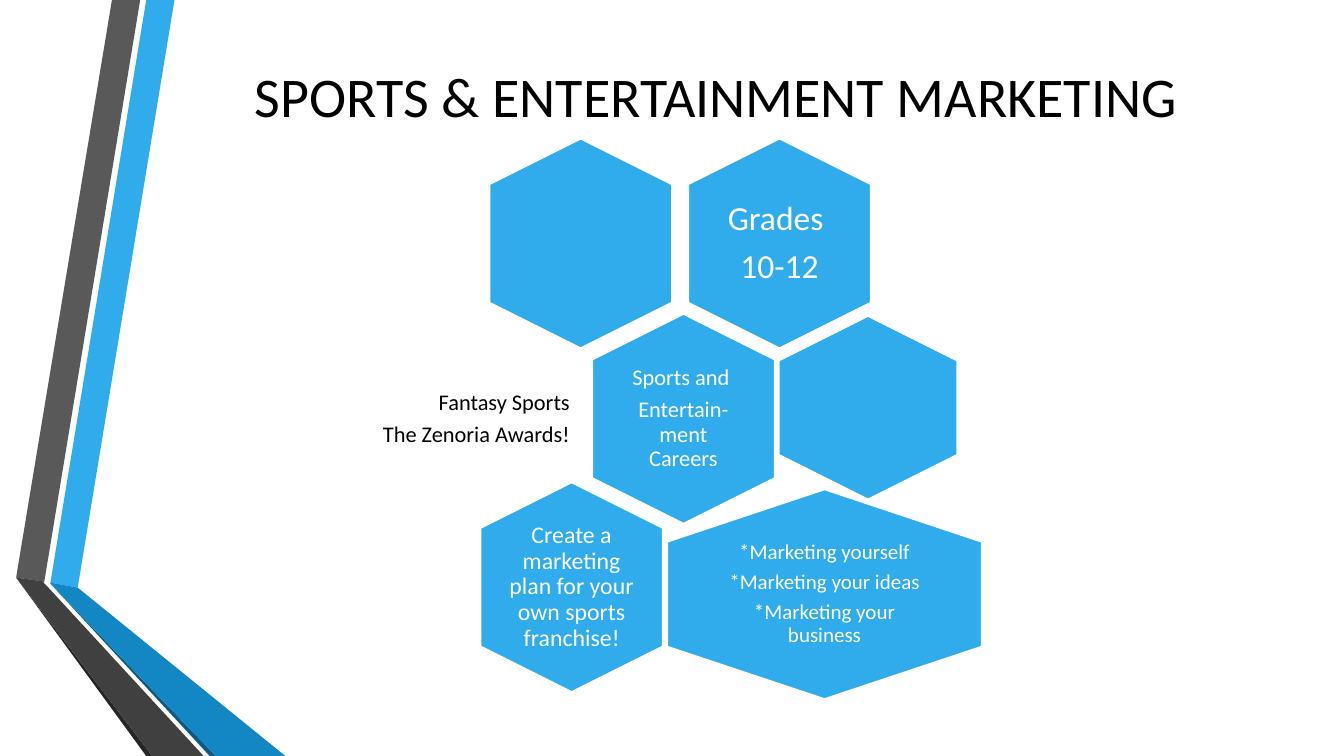
from pptx import Presentation
from pptx.dml.color import RGBColor
from pptx.enum.shapes import MSO_SHAPE
from pptx.enum.text import MSO_ANCHOR, MSO_AUTO_SIZE, PP_ALIGN
from pptx.util import Inches, Pt

HEXAGON = MSO_SHAPE.HEXAGON
MIDDLE = MSO_ANCHOR.MIDDLE
NO_AUTOFIT = MSO_AUTO_SIZE.NONE
CENTER, RIGHT = PP_ALIGN.CENTER, PP_ALIGN.RIGHT

WIDTH, HEIGHT = Inches(13.33), Inches(7.5)
FONT = "Calibri"
TITLE_SIZE = 40

WHITE = RGBColor(0xFF, 0xFF, 0xFF)
BLACK = RGBColor(0x00, 0x00, 0x00)
SKY = RGBColor(0x30, 0xAC, 0xEC)
OCEAN = RGBColor(0x12, 0x87, 0xC3)
NAVY = RGBColor(0x0C, 0x5A, 0x82)
GRAY = RGBColor(0x59, 0x59, 0x59)
CHARCOAL = RGBColor(0x40, 0x40, 0x40)
SOOT = RGBColor(0x26, 0x26, 0x26)

RIBBONS = [
    (SKY, [(3.75, 77.07), (5.78, 77.73), (12.98, 0), (10.88, 0)]),
    (GRAY, [(10.43, 0), (8.33, 0), (1.2, 76.4), (3.3, 76.93)]),
    (SOOT, [(1.2, 76.4), (10.88, 100), (11.33, 100)]),
    (NAVY, [(3.75, 77.2), (15.6, 100), (16.05, 100)]),
    (OCEAN, [(3.75, 77.07), (3.75, 77.2), (16.05, 100), (21.23, 100),
             (5.78, 77.73)]),
    (CHARCOAL, [(15.15, 100), (3.6, 77.73), (3.23, 77.07), (3.3, 76.93),
                (1.2, 76.4), (11.33, 100)]),
]

CELL = (13.58, 27.73)
SMALL_CELL = (13.28, 24.27)
WIDE_CELL = (23.4, 27.73)
CELL_TEXT = (9.3, 19.07)
WIDE_TEXT = (15.6, 18.53)
SIDE_TEXT = (16.8, 16.67)

GRADES = (58, 32.2)
TOP_LEFT = (43.2, 32.2)
CAREERS = (50.85, 55.4)
EVENTS = (34.5, 55.4)
MIDDLE_RIGHT = (64.58, 53.93)
SKILLS = (61.35, 78.6)
PROJECT = (42.53, 77.67)

HEXAGONS = [
    (GRADES, CELL), (TOP_LEFT, CELL), (CAREERS, CELL),
    (MIDDLE_RIGHT, SMALL_CELL), (SKILLS, WIDE_CELL), (PROJECT, CELL),
]

LABELS = [
    (GRADES, CELL_TEXT, 0.75, 24, WHITE, CENTER, ["Grades ", "10-12"]),
    (CAREERS, CELL_TEXT, 0.5, 16, WHITE, CENTER,
     ["Sports and ", "Entertain-ment Careers"]),
    (EVENTS, SIDE_TEXT, 0.5, 16, BLACK, RIGHT,
     ["Fantasy Sports", "The Zenoria Awards!"]),
    (SKILLS, WIDE_TEXT, 0.45, 15, WHITE, CENTER,
     ["*Marketing yourself", "*Marketing your ideas",
      "*Marketing your business"]),
    (PROJECT, CELL_TEXT, 0, 17, WHITE, CENTER,
     ["Create a marketing plan for your own sports franchise!"]),
]


def across(share):
    return round(WIDTH * share / 100)


def down(share):
    return round(HEIGHT * share / 100)


def centered(center, width, height):
    left = across(center[0]) - width // 2
    top = down(center[1]) - height // 2
    return left, top, width, height


def add_span(para, text, size, color):
    span = para.add_run()
    span.text = text
    span.font.name = FONT
    span.font.size = Pt(size)
    span.font.color.rgb = color


def set_title(page, text):
    title = page.shapes.title
    title.left, title.top = across(12.15), down(3.6)
    title.width, title.height = across(82.2), down(17.87)
    frame = title.text_frame
    frame.word_wrap = True
    frame.auto_size = NO_AUTOFIT
    frame.vertical_anchor = MIDDLE
    para = frame.paragraphs[0]
    para.alignment = CENTER
    add_span(para, text, TITLE_SIZE, BLACK)


def add_ribbon(page, color, corners):
    points = [(across(x), down(y)) for x, y in corners]
    builder = page.shapes.build_freeform(*points[0])
    builder.add_line_segments(points[1:], close=True)
    ribbon = builder.convert_to_shape()
    ribbon.shadow.inherit = False
    ribbon.fill.solid()
    ribbon.fill.fore_color.rgb = color
    ribbon.line.fill.background()


def add_hexagon(page, center, size):
    place = centered(center, down(size[1]), across(size[0]))
    hexagon = page.shapes.add_shape(HEXAGON, *place)
    hexagon.rotation = 90
    hexagon.adjustments[0] = 0.25
    hexagon.shadow.inherit = False
    hexagon.fill.solid()
    hexagon.fill.fore_color.rgb = SKY
    hexagon.line.color.rgb = WHITE
    hexagon.line.width = Pt(1.25)


def add_label(page, center, size, inset, points, color, alignment, lines):
    place = centered(center, across(size[0]), down(size[1]))
    frame = page.shapes.add_textbox(*place).text_frame
    frame.word_wrap = True
    frame.vertical_anchor = MIDDLE
    frame.margin_left = frame.margin_right = across(inset)
    frame.margin_top = frame.margin_bottom = across(inset)
    for index, line in enumerate(lines):
        para = frame.add_paragraph() if index else frame.paragraphs[0]
        para.alignment = alignment
        para.line_spacing = 0.9
        para.space_after = Pt(points * 0.35)
        add_span(para, line, points, color)


def main():
    deck = Presentation()
    deck.slide_width, deck.slide_height = WIDTH, HEIGHT
    page = deck.slides.add_slide(deck.slide_layouts.get_by_name("Title Only"))
    for color, corners in RIBBONS:
        add_ribbon(page, color, corners)
    set_title(page, "SPORTS & ENTERTAINMENT MARKETING")
    for center, size in HEXAGONS:
        add_hexagon(page, center, size)
    for label in LABELS:
        add_label(page, *label)
    deck.save("out.pptx")


if __name__ == "__main__":
    main()
